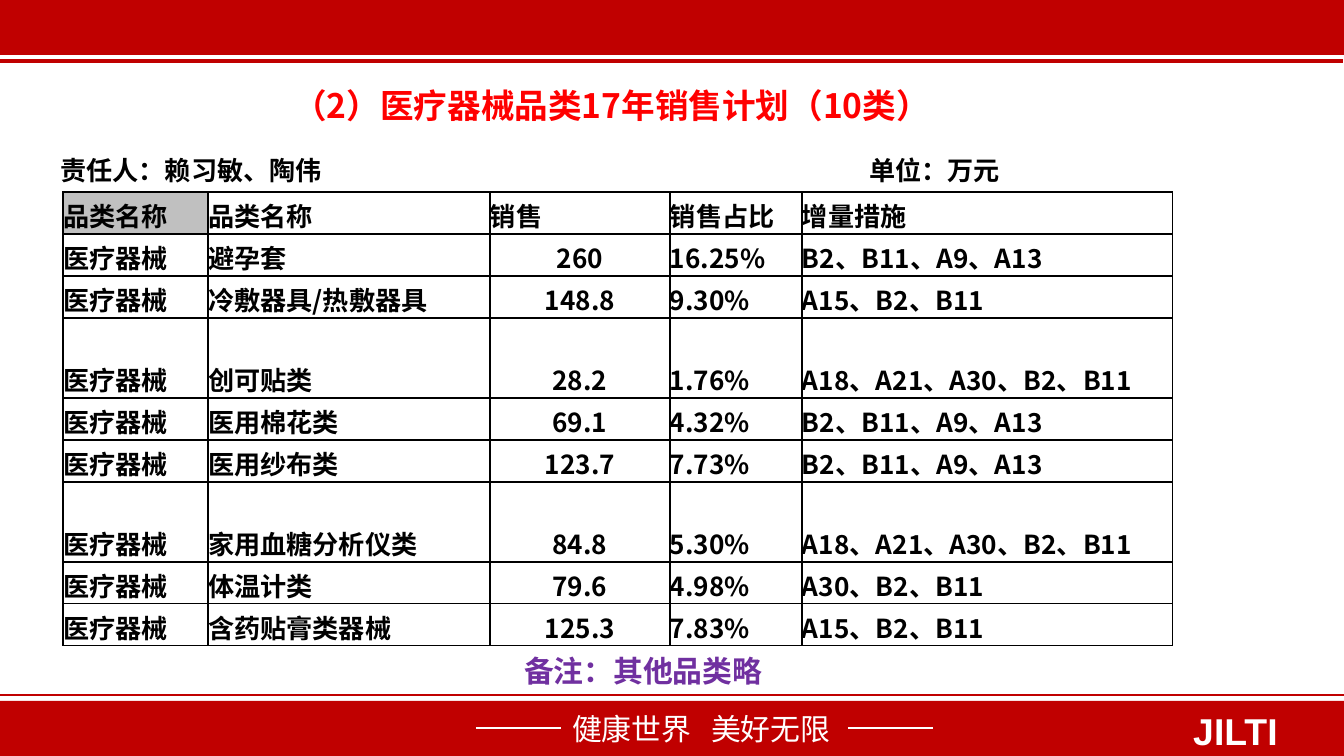
"""Builds the medical-device sales plan slide with its table and red bands."""
from lxml import etree
from pptx import Presentation
from pptx import util as u
from pptx.dml.color import RGBColor
from pptx.enum import shapes, text
from pptx.oxml import ns

SCALE = 914400 / 134.4
CJK = "Noto Sans CJK SC"
RED, BLACK, WHITE, GREY = "C00000", "000000", "FFFFFF", "C0C0C0"

BANDS = [(0, 0, 1344, 55), (0, 701, 1344, 55)]
RULES = [
    (0, 1344, 695, RED, 1),
    (0, 1343, 61, RED, 2.25),
    (476, 561, 728, WHITE, 0.75),
    (848, 933, 728, WHITE, 0.75),
]
TITLE = "\t（2）医疗器械品类17年销售计划（10类）"
OWNER_AND_UNIT = "\t责任人：赖习敏、陶伟\t单位：万元"
NOTE = "备注：其他品类略"
SLOGAN = "健康世界\t美好无限"
BRAND = "JILTI"

CATEGORY = "医疗器械"
HEADER = ("品类名称", "品类名称", "销售", "销售占比", "增量措施")
PRODUCTS = [
    ("避孕套", "260", "16.25%", "B2、B11、A9、A13"),
    ("冷敷器具/热敷器具", "148.8", "9.30%", "A15、B2、B11"),
    ("创可贴类", "28.2", "1.76%", "A18、A21、A30、B2、B11"),
    ("医用棉花类", "69.1", "4.32%", "B2、B11、A9、A13"),
    ("医用纱布类", "123.7", "7.73%", "B2、B11、A9、A13"),
    ("家用血糖分析仪类", "84.8", "5.30%", "A18、A21、A30、B2、B11"),
    ("体温计类", "79.6", "4.98%", "A30、B2、B11"),
    ("含药贴膏类器械", "125.3", "7.83%", "A15、B2、B11"),
]
TABLE_LEFT, TABLE_TOP = 63, 192
COLUMN_WIDTHS = (145, 282, 180, 132, 371)
ROW_HEIGHT, TALL_ROW_HEIGHT = 42, 80
SALES_COLUMN = 2
LONG_MEASURES = 16


def px(length):
    return u.Emu(round(length * SCALE))


def color(value):
    return RGBColor.from_string(value)


def write(para, words, size=14, fill=BLACK, font=CJK, bold=True, align=None,
          spacing=None, before=None, tabs=()):
    para.alignment, para.line_spacing = align, spacing
    if before:
        para.space_before = u.Pt(before)
    if tabs:
        stops = etree.SubElement(para._p.get_or_add_pPr(), ns.qn("a:tabLst"))
        for stop in tabs:
            etree.SubElement(stops, ns.qn("a:tab"), pos=str(px(stop)), algn="l")
    span = para.add_run()
    span.text = words
    span.font.size, span.font.bold, span.font.name = u.Pt(size), bold, font
    span.font.color.rgb = color(fill)
    etree.SubElement(span._r.get_or_add_rPr(), ns.qn("a:ea"), typeface=font)


def add_box(page, area, wrap=True):
    box = page.shapes.add_textbox(*map(px, area))
    box.text_frame.word_wrap = wrap
    box.text_frame.auto_size = text.MSO_AUTO_SIZE.SHAPE_TO_FIT_TEXT
    return box.text_frame


def add_band(page, area):
    band = page.shapes.add_shape(shapes.MSO_SHAPE.RECTANGLE, *map(px, area))
    band.shadow.inherit = False
    band.fill.solid()
    band.fill.fore_color.rgb = color(RED)
    band.line.fill.background()


def add_rule(page, left, right, y, stroke, weight):
    rule = page.shapes.add_connector(
        shapes.MSO_CONNECTOR.STRAIGHT, px(left), px(y), px(right), px(y))
    rule.line.color.rgb = color(stroke)
    rule.line.width = u.Pt(weight)
    etree.SubElement(rule._element.spPr, ns.qn("a:effectLst"))


def add_borders(cell, column):
    weights = {"L": 1 if column < 2 else 0.75, "R": 1 if column < 1 else 0.75,
               "T": 1, "B": 1}
    properties = cell._tc.get_or_add_tcPr()
    for side, weight in weights.items():
        edge = etree.SubElement(properties, ns.qn(f"a:ln{side}"), w=str(u.Pt(weight)))
        solid = etree.SubElement(edge, ns.qn("a:solidFill"))
        etree.SubElement(solid, ns.qn("a:srgbClr"), val=BLACK)


def add_sales_table(page):
    rows = [HEADER] + [(CATEGORY, *product) for product in PRODUCTS]
    heights = [TALL_ROW_HEIGHT if len(row[-1]) > LONG_MEASURES else ROW_HEIGHT
               for row in rows]
    area = (TABLE_LEFT, TABLE_TOP, sum(COLUMN_WIDTHS), sum(heights))
    table = page.shapes.add_table(len(rows), len(HEADER), *map(px, area)).table
    table.first_row = table.horz_banding = False
    for column, width in zip(table.columns, COLUMN_WIDTHS):
        column.width = px(width)
    for r, (row, height) in enumerate(zip(rows, heights)):
        table.rows[r].height = px(height)
        for c, words in enumerate(row):
            cell = table.cell(r, c)
            cell.margin_left = cell.margin_right = 0
            cell.margin_top = cell.margin_bottom = 0
            cell.vertical_anchor = text.MSO_ANCHOR.BOTTOM
            add_borders(cell, c)
            if r == c == 0:
                cell.fill.solid()
                cell.fill.fore_color.rgb = color(GREY)
            else:
                cell.fill.background()
            centred = r > 0 and c == SALES_COLUMN
            write(cell.text_frame.paragraphs[0], words,
                  align=text.PP_ALIGN.CENTER if centred else None)


def main():
    deck = Presentation()
    deck.slide_width, deck.slide_height = px(1344), px(756)
    page = deck.slides.add_slide(deck.slide_layouts[6])
    for area in BANDS:
        add_band(page, area)
    for rule in RULES:
        add_rule(page, *rule)

    slogan = add_box(page, (559, 704, 296, 50))
    write(slogan.paragraphs[0], SLOGAN, size=16, fill=WHITE, bold=False, tabs=[139])
    brand = add_box(page, (1180, 702, 117, 59), wrap=False)
    write(brand.paragraphs[0], BRAND, size=20, fill=WHITE, font="Arial")

    heading = add_box(page, (32, 58, 1275, 134))
    write(heading.paragraphs[0], TITLE, size=18, fill="FF0000", spacing=1.5, tabs=[248])
    write(heading.add_paragraph(), OWNER_AND_UNIT, spacing=1.5, before=7.5,
          tabs=[15, 824])
    add_sales_table(page)
    note = add_box(page, (511, 646, 266, 52), wrap=False)
    write(note.paragraphs[0], NOTE, size=16, fill="7030A0")
    deck.save("out.pptx")


if __name__ == "__main__":
    main()
